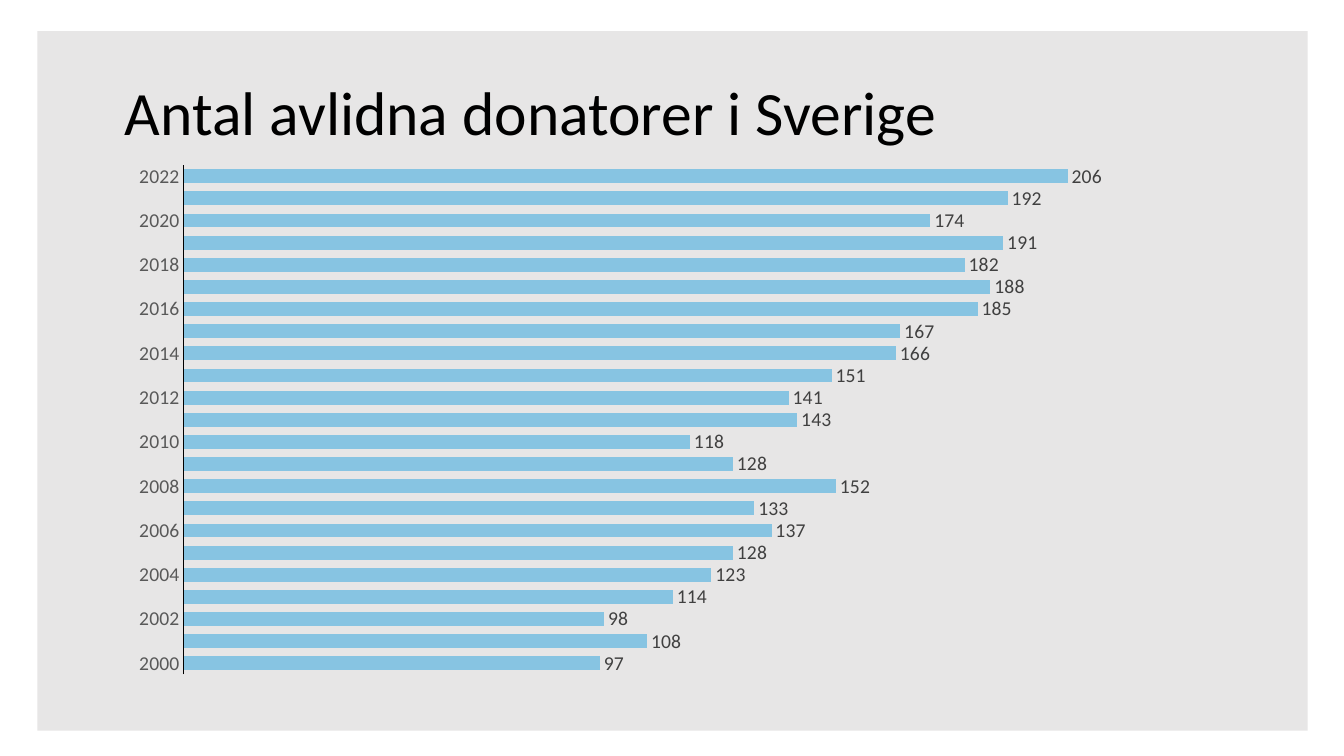
from lxml import etree
from pptx import Presentation
from pptx import util as u
from pptx.chart.data import CategoryChartData
from pptx.dml.color import RGBColor
from pptx.enum import chart as ch, shapes, text
from pptx.oxml import ns

FONT = "Calibri"
PANEL_GREY = RGBColor(0xE7, 0xE6, 0xE6)
BAR_BLUE = RGBColor(0x87, 0xC4, 0xE2)
YEAR_GREY = RGBColor(0x59, 0x59, 0x59)
VALUE_GREY = RGBColor(0x40, 0x40, 0x40)
BLACK = RGBColor(0, 0, 0)

FIRST_YEAR = 2000
DONORS = [97, 108, 98, 114, 123, 128, 137, 133, 152, 128, 118, 143,
          141, 151, 166, 167, 185, 188, 182, 191, 174, 192, 206]


def inches(*box):
    return [u.Inches(length) for length in box]


def style_font(font, size, color):
    font.name = FONT
    font.size = u.Pt(size)
    font.color.rgb = color


def add_panel(slide, box):
    panel = slide.shapes.add_shape(shapes.MSO_SHAPE.RECTANGLE, *inches(*box))
    panel.shadow.inherit = False
    panel.fill.solid()
    panel.fill.fore_color.rgb = PANEL_GREY
    panel.line.fill.background()


def add_heading(slide, box, wording):
    frame = slide.shapes.add_textbox(*inches(*box)).text_frame
    frame.word_wrap = True
    frame.vertical_anchor = text.MSO_ANCHOR.MIDDLE
    heading = frame.paragraphs[0]
    heading.line_spacing = 0.9
    run = heading.add_run()
    run.text = wording
    style_font(run.font, 44, BLACK)


def place_plot(chart, x, y, w, h):
    plot_area = chart._chartSpace.chart.plotArea
    for old in plot_area.findall(ns.qn("c:layout")):
        plot_area.remove(old)
    layout = etree.Element(ns.qn("c:layout"))
    manual = etree.SubElement(layout, ns.qn("c:manualLayout"))
    settings = [("layoutTarget", "inner"), ("xMode", "edge"), ("yMode", "edge"),
                ("x", x), ("y", y), ("w", w), ("h", h)]
    for tag, value in settings:
        etree.SubElement(manual, ns.qn("c:" + tag)).set("val", str(value))
    plot_area.insert(0, layout)


def label_every_second_year(axis):
    skip = etree.Element(ns.qn("c:tickLblSkip"))
    skip.set("val", "2")
    axis._element.find(ns.qn("c:noMultiLvlLbl")).addprevious(skip)


def add_donor_chart(slide, box):
    data = CategoryChartData()
    data.categories = [str(FIRST_YEAR + i) for i in range(len(DONORS))]
    data.add_series("Antal donatorer", DONORS)
    chart = slide.shapes.add_chart(
        ch.XL_CHART_TYPE.BAR_CLUSTERED, *inches(*box), data).chart
    chart.has_title = False
    chart.has_legend = False
    style_font(chart.font, 14, BLACK)
    place_plot(chart, 0.096, 0.045, 0.781, 0.845)

    years = chart.category_axis
    years.major_tick_mark = ch.XL_TICK_MARK.NONE
    years.has_major_gridlines = False
    years.format.line.color.rgb = BLACK
    years.format.line.width = u.Pt(0.75)
    style_font(years.tick_labels.font, 14, YEAR_GREY)
    label_every_second_year(years)

    counts = chart.value_axis
    counts.minimum_scale = 0
    counts.maximum_scale = 220
    counts.major_unit = 20
    counts.has_major_gridlines = False
    counts.visible = False

    bars = chart.plots[0]
    bars.gap_width = 60
    bars.vary_by_categories = False
    donors = bars.series[0]
    donors.format.fill.solid()
    donors.format.fill.fore_color.rgb = BAR_BLUE
    labels = donors.data_labels
    labels.show_value = True
    labels.position = ch.XL_LABEL_POSITION.OUTSIDE_END
    style_font(labels.font, 14, VALUE_GREY)


def main():
    deck = Presentation()
    deck.slide_width, deck.slide_height = inches(13.33, 7.5)
    slide = deck.slides.add_slide(deck.slide_layouts[6])
    add_panel(slide, (0.37, 0.31, 12.6, 6.94))
    add_heading(slide, (1.14, 0.42, 11.5, 1.45), "Antal avlidna donatorer i Sverige")
    add_donor_chart(slide, (0.67, 1.37, 11.99, 5.98))
    deck.save("out.pptx")


if __name__ == "__main__":
    main()
